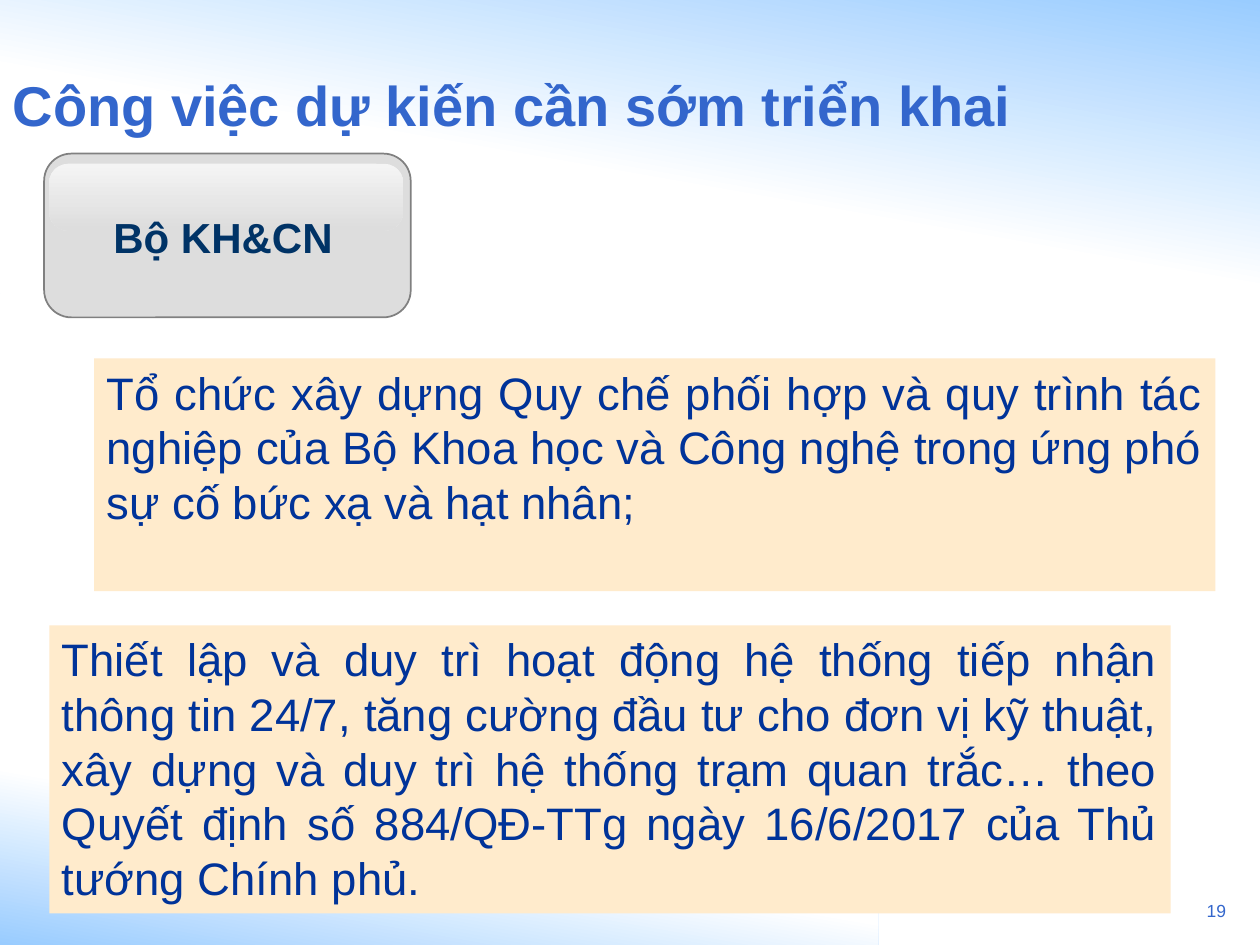
from dataclasses import dataclass

from lxml.etree import SubElement
from pptx import Presentation
from pptx.dml.color import RGBColor
from pptx.enum.shapes import MSO_SHAPE
from pptx.enum.text import MSO_ANCHOR, PP_ALIGN
from pptx.oxml.ns import qn
from pptx.util import Pt

SKY = RGBColor(0x99, 0xCC, 0xFF)
WHITE = RGBColor(0xFF, 0xFF, 0xFF)
BLUE = RGBColor(0x33, 0x66, 0xCC)
NAVY = RGBColor(0x00, 0x33, 0x99)
DARK = RGBColor(0x00, 0x33, 0x66)
CREAM = RGBColor(0xFF, 0xEB, 0xCC)
SILVER = RGBColor(0xDD, 0xDD, 0xDD)
GRAY = RGBColor(0x80, 0x80, 0x80)


@dataclass
class Frame:
    left: float
    top: float
    width: float
    height: float

    def lengths(self) -> list:
        return [Pt(value) for value in (self.left, self.top, self.width, self.height)]


@dataclass
class Wash:
    frame: Frame
    angle: float
    end: float


@dataclass
class Task:
    frame: Frame
    text: str


WASHES = [
    Wash(Frame(0, 417.6, 501.84, 122.4), 80, 0.48),
    Wash(Frame(0, 0, 720, 167.8), 260, 0.56),
]
TASKS = [
    Task(
        Frame(53.8, 204.8, 640.8, 133),
        "Tổ chức xây dựng Quy chế phối hợp và quy trình tác nghiệp của Bộ Khoa học "
        "và Công nghệ trong ứng phó sự cố bức xạ và hạt nhân;",
    ),
    Task(
        Frame(28.2, 357.3, 640.8, 164.6),
        "Thiết lập và duy trì hoạt động hệ thống tiếp nhận thông tin 24/7, tăng cường "
        "đầu tư cho đơn vị kỹ thuật, xây dựng và duy trì hệ thống trạm quan trắc… theo "
        "Quyết định số 884/QĐ-TTg ngày 16/6/2017 của Thủ tướng Chính phủ.",
    ),
]


def add_panel(shapes, kind: MSO_SHAPE, frame: Frame):
    panel = shapes.add_shape(kind, *frame.lengths())
    panel.shadow.inherit = False
    panel.line.fill.background()
    return panel


def fill_gradient(shape, colors: tuple, angle: float, end: float = 1) -> None:
    shape.fill.gradient()
    shape.fill.gradient_angle = angle
    for stop, color, position in zip(shape.fill.gradient_stops, colors, (0, end)):
        stop.color.rgb = color
        stop.position = position


def write(shape, text: str, size: float, color: RGBColor, align: PP_ALIGN,
          anchor: MSO_ANCHOR = MSO_ANCHOR.TOP, bold: bool = False) -> None:
    text_frame = shape.text_frame
    text_frame.word_wrap = True
    text_frame.vertical_anchor = anchor
    para = text_frame.paragraphs[0]
    para.alignment = align
    span = para.add_run()
    span.text = text
    font_format = {"name": "Arial", "size": Pt(size), "bold": bold}
    for name, value in font_format.items():
        setattr(span.font, name, value)
    span.font.color.rgb = color


def place_title(page, frame: Frame, text: str) -> None:
    title = page.shapes.title
    for name, value in zip(("left", "top", "width", "height"), frame.lengths()):
        setattr(title, name, value)
    write(title, text, 32, BLUE, PP_ALIGN.LEFT, MSO_ANCHOR.MIDDLE, True)
    page.shapes._spTree.append(title._element)


def add_button(page) -> None:
    group = page.shapes.add_group_shape()
    base = add_panel(group.shapes, MSO_SHAPE.ROUNDED_RECTANGLE, Frame(25.2, 87.8, 209.5, 93.6))
    base.adjustments[0] = 0.167
    base.fill.solid()
    base.fill.fore_color.rgb = SILVER
    base.line.color.rgb = GRAY
    base.line.width = Pt(1)
    gloss = add_panel(group.shapes, MSO_SHAPE.ROUNDED_RECTANGLE, Frame(28.1, 93.6, 202.3, 38.2))
    gloss.adjustments[0] = 0.284
    fill_gradient(gloss, (WHITE, SILVER), 270)
    for color in gloss._element.spPr.iter(qn("a:srgbClr")):
        SubElement(color, qn("a:alpha"), val="70000")


def main() -> None:
    deck = Presentation()
    deck.slide_width, deck.slide_height = Pt(720), Pt(540)
    page = deck.slides.add_slide(deck.slide_layouts[5])
    for wash in WASHES:
        panel = add_panel(page.shapes, MSO_SHAPE.RECTANGLE, wash.frame)
        fill_gradient(panel, (SKY, WHITE), wash.angle, wash.end)
    number = page.shapes.add_textbox(*Frame(667.4, 510.5, 40.3, 23).lengths())
    write(number, "19", 10, BLUE, PP_ALIGN.RIGHT)
    place_title(page, Frame(0, 25.9, 597.6, 67.7), "Công việc dự kiến cần sớm triển khai")
    for task in TASKS:
        box = add_panel(page.shapes, MSO_SHAPE.RECTANGLE, task.frame)
        box.fill.solid()
        box.fill.fore_color.rgb = CREAM
        write(box, task.text, 26, NAVY, PP_ALIGN.JUSTIFY)
    add_button(page)
    label = page.shapes.add_textbox(*Frame(46.8, 117.4, 161.3, 36).lengths())
    write(label, "Bộ KH&CN", 24, DARK, PP_ALIGN.CENTER, bold=True)
    deck.save("out.pptx")


if __name__ == "__main__":
    main()
